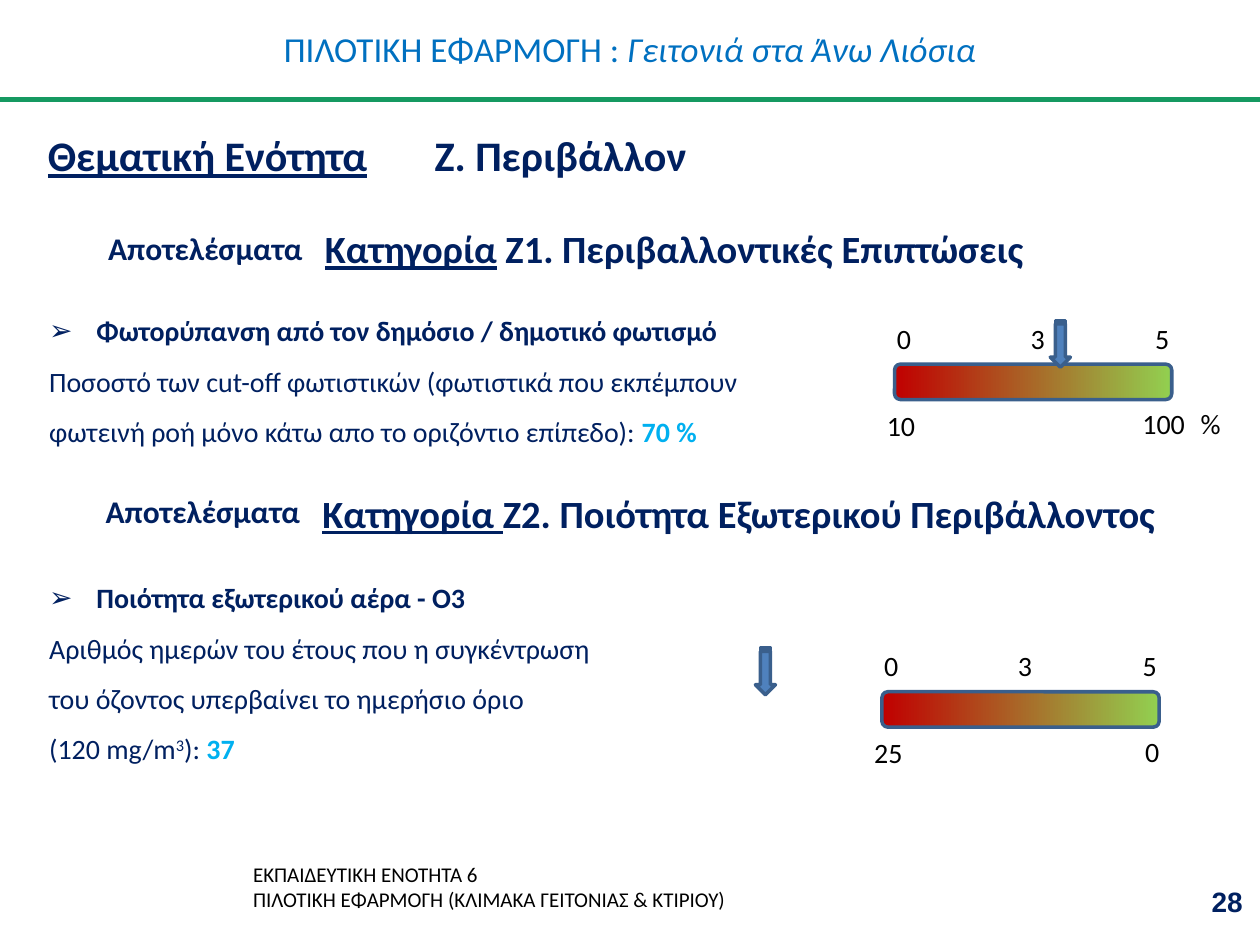
from pptx import Presentation
from pptx import util as u
from pptx.dml import color as c
from pptx.enum import shapes as s, text as t
from pptx.oxml import parse_xml
from pptx.oxml.ns import nsdecls

Pt = u.Pt
NAVY, BLUE, CYAN, BLACK, EDGE = "002060", "0070C0", "00B0F0", "000000", "3A5F8C"


def tint(code):
    return c.RGBColor.from_string(code)


def write(para, words, size, code, bold=False, under=False, face="Calibri"):
    run = para.add_run()
    run.text = words
    font = run.font
    font.name, font.size, font.bold, font.underline = face, Pt(size), bold, under
    font.color.rgb = tint(code)
    return run


deck = Presentation()
deck.slide_width, deck.slide_height = Pt(720), Pt(540)
page = deck.slides.add_slide(deck.slide_layouts[3])
items = page.shapes
title, *lists = page.placeholders

rule = items.add_connector(s.MSO_CONNECTOR.STRAIGHT, Pt(0), Pt(56.9), Pt(720), Pt(56.9))
rule.line.color.rgb = tint("159961")
rule.line.width = Pt(3)
rule._element.spPr.append(parse_xml(f"<a:effectLst {nsdecls('a')}/>"))

title.left, title.top, title.width, title.height = Pt(0), Pt(0), Pt(720), Pt(55.4)
frame = title.text_frame
frame.vertical_anchor = t.MSO_ANCHOR.MIDDLE
frame.auto_size = t.MSO_AUTO_SIZE.NONE
para = frame.paragraphs[0]
para.alignment = t.PP_ALIGN.CENTER
write(para, "ΠΙΛΟΤΙΚΗ ΕΦΑΡΜΟΓΗ : ", 20, BLUE)
write(para, "Γειτονιά στα Άνω Λιόσια", 20, BLUE).font.italic = True

topics = [
    (175.7, 85, [
        [("Φωτορύπανση από τον δημόσιο / δημοτικό φωτισμό", NAVY, True)],
        [("Ποσοστό των cut-off φωτιστικών (φωτιστικά που εκπέμπουν", NAVY, False)],
        [("φωτεινή ροή μόνο κάτω απο το οριζόντιο επίπεδο): ", NAVY, False),
         ("70 %", CYAN, True)]]),
    (328.3, 113.8, [
        [("Ποιότητα εξωτερικού αέρα - Ο3", NAVY, True)],
        [("Αριθμός ημερών του έτους που η συγκέντρωση", NAVY, False)],
        [("του όζοντος υπερβαίνει το ημερήσιο όριο", NAVY, False)],
        [("(120 mg/m", NAVY, False), ("3", NAVY, False),
         ("): ", NAVY, False), ("37", CYAN, True)]]),
]
for body, (top, high, rows) in zip(lists, topics):
    body.left, body.top, body.width, body.height = Pt(20.9), Pt(top), Pt(699.1), Pt(high)
    frame = body.text_frame
    frame.auto_size = t.MSO_AUTO_SIZE.NONE
    for i, row in enumerate(rows):
        para = frame.add_paragraph() if i else frame.paragraphs[0]
        para.space_before = Pt(0)
        para.line_spacing = 1.5 if i else 1.0
        props = para._p.get_or_add_pPr()
        dent = 0 if i else Pt(27)
        props.set("marL", str(dent))
        props.set("indent", str(-dent))
        if i:
            props.append(parse_xml(f"<a:buNone {nsdecls('a')}/>"))
        else:
            props.append(parse_xml(f'<a:buFont {nsdecls("a")} typeface="Arial"/>'))
            props.append(parse_xml(f'<a:buChar {nsdecls("a")} char="➢"/>'))
        for words, code, bold in row:
            run = write(para, words, 16, code, bold)
            if words == "3":
                run.font._element.set("baseline", "30000")

LEFT, RIGHT = t.PP_ALIGN.LEFT, t.PP_ALIGN.RIGHT
notes = [
    (20.2, 70.6, 699, 36, 24, [("Θεματική Ενότητα", True), ("\tΖ. Περιβάλλον", False)]),
    (178.6, 125.3, 541.4, 33.8, 22,
     [("Κατηγορία", True), (" Ζ1. Περιβαλλοντικές Επιπτώσεις", False)]),
    (54.7, 127.4, 130.3, 28.8, 18, [("Αποτελέσματα", False)]),
    (177.1, 276.5, 541.4, 33.8, 22,
     [("Κατηγορία ", True), ("Ζ2. Ποιότητα Εξωτερικού Περιβάλλοντος", False)]),
    (53.3, 277.9, 130.3, 28.8, 18, [("Αποτελέσματα", False)]),
]
for left, top, wide, high, size, runs in notes:
    frame = items.add_textbox(Pt(left), Pt(top), Pt(wide), Pt(high)).text_frame
    frame.word_wrap = True
    para = frame.paragraphs[0]
    if size == 24:
        para._p.get_or_add_pPr().append(parse_xml(
            f'<a:tabLst {nsdecls("a")}><a:tab pos="{Pt(221)}" algn="l"/></a:tabLst>'))
    for words, under in runs:
        write(para, words, size, NAVY, True, under)

scales = [
    (511.2, 208.1, 592.6, 190.8,
     [("10", -11.5, 21.6, 31), ("100", 134.6, 20.9, 38.9), ("%", 167.8, 20.9, 25.9)]),
    (504, 395.3, 424.1, 378, [("25", -11.5, 21.6, 31), ("0", 143.3, 20.9, 23)]),
]
marks = [("0", -5.8, -28.1, 23), ("3", 70.6, -28.1, 23), ("5", 141.8, -28.1, 23)]
for left, top, tipx, tipy, ends in scales:
    bar = items.add_shape(s.MSO_SHAPE.ROUNDED_RECTANGLE, Pt(left), Pt(top), Pt(158.4), Pt(20.2))
    bar.fill.gradient()
    bar.fill.gradient_angle = 0
    for stop, code, spot in zip(bar.fill.gradient_stops, ("C00000", "92D050"), (0, 1)):
        stop.color.rgb = tint(code)
        stop.position = spot
    for words, dx, dy, wide in marks + ends:
        frame = items.add_textbox(Pt(left + dx), Pt(top + dy), Pt(wide), Pt(26.6)).text_frame
        frame.word_wrap = False
        write(frame.paragraphs[0], words, 16, BLACK)
    tip = items.add_shape(s.MSO_SHAPE.STRIPED_RIGHT_ARROW, Pt(tipx), Pt(tipy), Pt(26.6), Pt(11.5))
    tip.rotation = 90
    tip.fill.solid()
    tip.fill.fore_color.rgb = tint("4F81BD")
    for shape in (bar, tip):
        shape.shadow.inherit = False
        shape.line.color.rgb = tint(EDGE)
        shape.line.width = Pt(2)

frame = items.add_textbox(Pt(137.5), Pt(488.9), Pt(488.9), Pt(36)).text_frame
frame.word_wrap = True
para = frame.paragraphs[0]
write(para, "ΕΚΠΑΙΔΕΥΤΙΚΗ ΕΝΟΤΗΤΑ 6", 12, BLACK)
para.add_line_break()
write(para, "ΠΙΛΟΤΙΚΗ ΕΦΑΡΜΟΓΗ (ΚΛΙΜΑΚΑ ΓΕΙΤΟΝΙΑΣ & ΚΤΙΡΙΟΥ)", 12, BLACK)

frame = items.add_textbox(Pt(549.4), Pt(500.4), Pt(167.8), Pt(28.8)).text_frame
frame.word_wrap = True
frame.vertical_anchor = t.MSO_ANCHOR.MIDDLE
para = frame.paragraphs[0]
para.alignment = RIGHT
write(para, "28", 16, NAVY, True, face="Arial")

deck.save("out.pptx")
